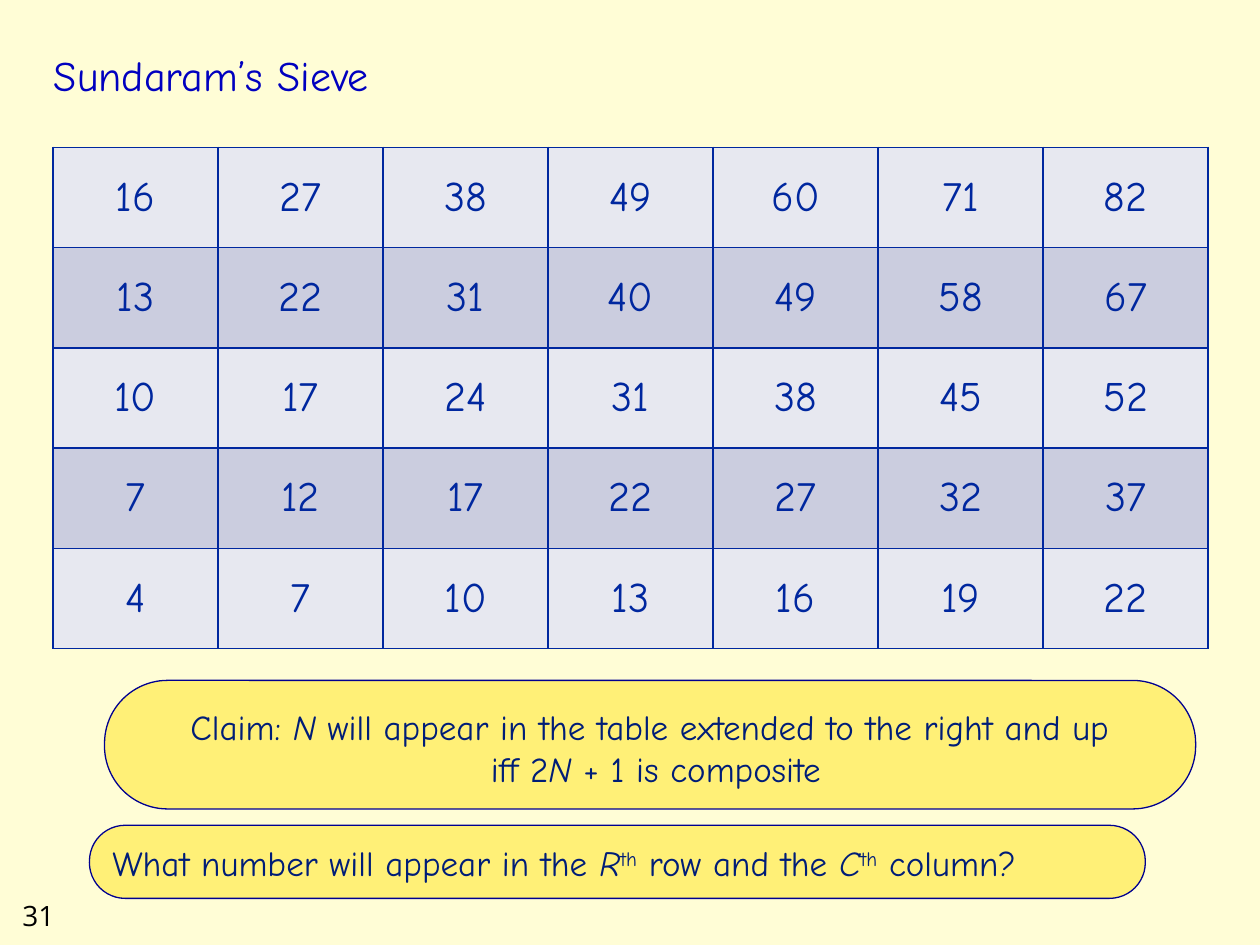
from dataclasses import dataclass

from lxml.etree import SubElement
from pptx import Presentation
from pptx.dml.color import RGBColor
from pptx.enum.shapes import MSO_SHAPE
from pptx.enum.text import MSO_ANCHOR, PP_ALIGN
from pptx.oxml.ns import qn
from pptx.util import Inches, Pt


@dataclass(frozen=True)
class Theme:
    background: str = "FFFDD6"
    title: str = "0000BF"
    grid: str = "00279F"
    light_row: str = "E7E8F0"
    dark_row: str = "CBCDDF"
    callout: str = "FFF077"
    callout_line: str = "000090"
    callout_text: str = "001D77"
    number: str = "000000"
    font: str = "Comic Neue"
    number_font: str = "Open Sans"
    large: int = 24
    body: int = 20
    small: int = 16


THEME = Theme()
SIEVE = [
    [16, 27, 38, 49, 60, 71, 82],
    [13, 22, 31, 40, 49, 58, 67],
    [10, 17, 24, 31, 38, 45, 52],
    [7, 12, 17, 22, 27, 32, 37],
    [4, 7, 10, 13, 16, 19, 22],
]


def rgb(value):
    return RGBColor.from_string(value)


def style_run(r, size, color, font=THEME.font):
    r.font.size = Pt(size)
    r.font.name = font
    r.font.color.rgb = rgb(color)


def add_text(s, box, text, size, color, font=THEME.font, anchor=MSO_ANCHOR.TOP):
    tf = s.shapes.add_textbox(*map(Inches, box)).text_frame
    tf.word_wrap = True
    tf.vertical_anchor = anchor
    tf.text = text
    style_run(tf.paragraphs[0].runs[0], size, color, font)


def set_borders(cell, color, width):
    """Insert the four edge lines ahead of the cell's fill, as the schema requires."""
    tc_pr = cell._tc.get_or_add_tcPr()
    for i, edge in enumerate(("a:lnL", "a:lnR", "a:lnT", "a:lnB")):
        ln = SubElement(tc_pr, qn(edge), w=str(Pt(width)))
        fill = SubElement(ln, qn("a:solidFill"))
        SubElement(fill, qn("a:srgbClr"), val=color)
        tc_pr.insert(i, ln)


def add_number_table(s, box, rows):
    table = s.shapes.add_table(len(rows), len(rows[0]), *map(Inches, box)).table
    for i, row in enumerate(rows):
        for j, value in enumerate(row):
            cell = table.cell(i, j)
            cell.fill.solid()
            cell.fill.fore_color.rgb = rgb(
                THEME.dark_row if i % 2 else THEME.light_row)
            set_borders(cell, THEME.grid, 1)
            cell.vertical_anchor = MSO_ANCHOR.MIDDLE
            cell.text = str(value)
            p = cell.text_frame.paragraphs[0]
            p.alignment = PP_ALIGN.CENTER
            style_run(p.runs[0], THEME.large, THEME.grid)


def add_callout(s, box, lines, alignment):
    """Each line is a list of (text, kind); kind is "", "italic" or "super"."""
    sp = s.shapes.add_shape(MSO_SHAPE.ROUNDED_RECTANGLE, *map(Inches, box))
    sp.adjustments[0] = 0.49
    sp.shadow.inherit = False
    sp.fill.solid()
    sp.fill.fore_color.rgb = rgb(THEME.callout)
    sp.line.color.rgb = rgb(THEME.callout_line)
    sp.line.width = Pt(0.75)
    tf = sp.text_frame
    tf.word_wrap = True
    tf.vertical_anchor = MSO_ANCHOR.TOP
    for i, line in enumerate(lines):
        p = tf.add_paragraph() if i else tf.paragraphs[0]
        p.alignment = alignment
        for text, kind in line:
            r = p.add_run()
            r.text = text
            style_run(r, THEME.body, THEME.callout_text)
            if kind == "italic":
                r.font.italic = True
            elif kind == "super":
                r.font._element.set("baseline", "30000")


def main():
    prs = Presentation()
    prs.slide_width, prs.slide_height = Inches(10), Inches(7.5)
    s = prs.slides.add_slide(prs.slide_layouts[6])
    s.background.fill.solid()
    s.background.fill.fore_color.rgb = rgb(THEME.background)

    add_text(s, (0.08, 7.08, 0.75, 0.37), "31", THEME.small, THEME.number,
             THEME.number_font)
    add_text(s, (0.33, 0.17, 8.5, 0.67), "Sundaram’s Sieve", THEME.large,
             THEME.title, anchor=MSO_ANCHOR.BOTTOM)
    add_number_table(s, (0.42, 1.17, 9.17, 3.98), SIEVE)
    add_callout(s, (0.71, 6.55, 8.38, 0.58), [
        [("What number will appear in the ", ""), ("R", "italic"),
         ("th", "super"), (" row and the ", ""), ("C", "italic"),
         ("th", "super"), (" column?", "")],
    ], PP_ALIGN.LEFT)
    add_callout(s, (0.83, 5.4, 8.66, 1.02), [
        [("Claim: ", ""), ("N", "italic"),
         (" will appear in the table extended to the right and up", "")],
        [(" iff 2", ""), ("N", "italic"), (" + 1 is composite", "")],
    ], PP_ALIGN.CENTER)
    prs.save("out.pptx")


if __name__ == "__main__":
    main()
